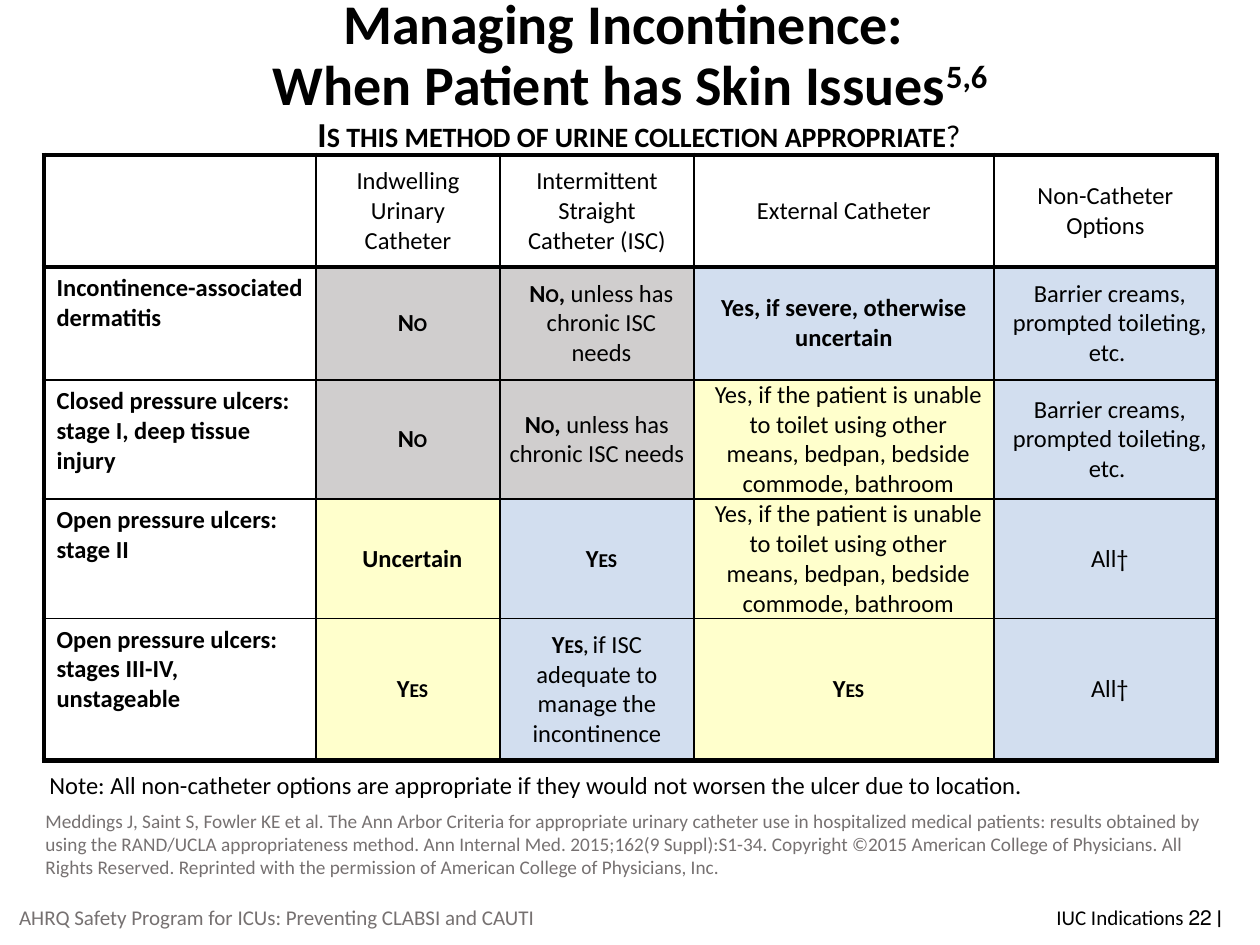
from dataclasses import dataclass

from lxml import etree
from pptx import Presentation
from pptx.dml.color import RGBColor
from pptx.enum.text import MSO_ANCHOR, PP_ALIGN
from pptx.oxml.ns import qn
from pptx.util import Emu, Pt

LEFT, CENTER, RIGHT = PP_ALIGN.LEFT, PP_ALIGN.CENTER, PP_ALIGN.RIGHT
TOP, MIDDLE = MSO_ANCHOR.TOP, MSO_ANCHOR.MIDDLE
SCALE = 914400 / 126
COLORS = {"black": "000000", "gray": "767171", "no": "D0CECE",
          "yes": "D2DEEF", "maybe": "FFFFCC"}
THIN, THICK = 1, 3
INDENT = 9
COLS = (272, 184, 194, 300, 223)
ROWS = (112, 113, 117, 117, 142)
TABLE_X, TABLE_Y = 44, 155


@dataclass(frozen=True)
class Run:
    text: str
    bold: bool = False
    caps: bool = False
    size: int = 0
    font: str = "Calibri"
    base: int = 0


@dataclass(frozen=True)
class Box:
    rect: tuple[int, int, int, int]
    lines: tuple[tuple[Run, ...], ...]
    size: int
    color: str = "black"
    align: PP_ALIGN = LEFT
    anchor: MSO_ANCHOR = TOP
    spacing: float = 1.0


@dataclass(frozen=True)
class Cell:
    runs: tuple[Run, ...]
    fill: str = ""
    indent: int = INDENT


def px(n: int) -> Emu:
    return Emu(round(n * SCALE))


def add_runs(p, runs: tuple[Run, ...], size: int, color: str) -> None:
    for run in runs:
        r = p.add_run()
        r.text = run.text
        fmt = {"name": run.font, "size": Pt(run.size or size), "bold": run.bold}
        for key, value in fmt.items():
            setattr(r.font, key, value)
        r.font.color.rgb = RGBColor.from_string(COLORS[color])
        rPr = r.font._element
        if run.caps:
            rPr.set("cap", "small")
        if run.base:
            rPr.set("baseline", str(run.base * 1000))


def add_box(s, box: Box) -> None:
    tf = s.shapes.add_textbox(*map(px, box.rect)).text_frame
    for key, value in {"word_wrap": True, "vertical_anchor": box.anchor}.items():
        setattr(tf, key, value)
    p = tf.paragraphs[0]
    for key, value in {"alignment": box.align, "line_spacing": box.spacing}.items():
        setattr(p, key, value)
    for i, runs in enumerate(box.lines):
        if i:
            p.add_line_break()
        add_runs(p, runs, box.size, box.color)


def add_border(tcPr, side: str, width: int) -> None:
    ln = etree.SubElement(tcPr, qn(f"a:ln{side}"), w=str(Pt(width)))
    fill = etree.SubElement(ln, qn("a:solidFill"))
    etree.SubElement(fill, qn("a:srgbClr"), val=COLORS["black"])


def fill_cell(tc, cell: Cell, row: int, col: int) -> None:
    label, body = col == 0, row > 0 and col > 0
    fmt = {"vertical_anchor": TOP if label else MIDDLE}
    if body:
        fmt |= {"margin_left": px(9), "margin_right": px(9),
                "margin_top": 0, "margin_bottom": 0}
    for key, value in fmt.items():
        setattr(tc, key, value)
    edges = {"L": col == 0, "R": col == len(COLS) - 1,
             "T": row <= 1, "B": row in (0, len(ROWS) - 1)}
    for side, thick in edges.items():
        add_border(tc._tc.get_or_add_tcPr(), side, THICK if thick else THIN)
    if cell.fill:
        tc.fill.solid()
        tc.fill.fore_color.rgb = RGBColor.from_string(COLORS[cell.fill])
    else:
        tc.fill.background()
    p = tc.text_frame.paragraphs[0]
    p.alignment = LEFT if label else CENTER
    if body and cell.indent:
        pPr = p._p.get_or_add_pPr()
        pPr.set("marL", str(px(cell.indent)))
        pPr.set("indent", "0")
    add_runs(p, cell.runs, 14, "black")


def add_grid(s, grid: tuple[tuple[Cell, ...], ...]) -> None:
    rect = (TABLE_X, TABLE_Y, sum(COLS), sum(ROWS))
    table = s.shapes.add_table(len(ROWS), len(COLS), *map(px, rect)).table
    for key in ("first_row", "horz_banding"):
        setattr(table, key, False)
    for column, width in zip(table.columns, COLS):
        column.width = px(width)
    for row, height in zip(table.rows, ROWS):
        row.height = px(height)
    for i, cells in enumerate(grid):
        for j, cell in enumerate(cells):
            fill_cell(table.cell(i, j), cell, i, j)


def plain(text: str, fill: str = "") -> Cell:
    return Cell((Run(text),), fill)


def strong(text: str, fill: str = "", caps: bool = False, indent: int = INDENT) -> Cell:
    return Cell((Run(text, True, caps),), fill, indent)


def no_unless(indent: int) -> Cell:
    return Cell((Run("No", True, True), Run(", ", True),
                 Run("unless has chronic ISC needs")), "no", indent)


NO = strong("No", "no", True)
CREAMS = plain("Barrier creams, prompted toileting, etc. ", "yes")
UNABLE = plain("Yes, if the patient is unable to toilet using other means, "
               "bedpan, bedside commode, bathroom", "maybe")
ALL = plain("All†", "yes")
YES_IF = Cell((Run("Yes, ", True, True),
               Run("if ISC adequate to manage the incontinence")), "yes", 0)

GRID = (
    (Cell(()), plain("Indwelling Urinary Catheter"),
     plain("Intermittent Straight Catheter (ISC)"),
     plain("External Catheter"), plain("Non-Catheter Options")),
    (strong("Incontinence-associated dermatitis"), NO, no_unless(INDENT),
     strong("Yes, if severe, otherwise uncertain", "yes", indent=0), CREAMS),
    (strong("Closed pressure ulcers: stage I, deep tissue injury"), NO,
     no_unless(0), UNABLE, CREAMS),
    (strong("Open pressure ulcers: stage II"), strong("Uncertain", "maybe"),
     strong("Yes", "yes", True), UNABLE, ALL),
    (strong("Open pressure ulcers: stages III-IV, unstageable"),
     strong("Yes", "maybe", True), YES_IF, strong("Yes", "maybe", True), ALL),
)

BOXES = (
    Box((87, 1, 1086, 112),
        ((Run("Managing Incontinence: ", True),),
         (Run("When Patient has Skin Issues", True), Run("5,6", True, base=30))),
        32, align=CENTER, anchor=MIDDLE, spacing=0.9),
    Box((228, 106, 822, 55),
        ((Run("Is this method of urine collection appropriate", True, True),
          Run("?", size=18)),), 20, align=CENTER),
    Box((37, 764, 1194, 43),
        ((Run("Note: All non-catheter options are appropriate if they would not "
              "worsen the ulcer due to location."),),), 14),
    Box((33, 803, 1200, 83),
        ((Run("Meddings J, Saint S, Fowler KE et al. The Ann Arbor Criteria for "
              "appropriate urinary catheter use in hospitalized medical patients: "
              "results obtained by using the RAND/UCLA appropriateness method. "
              "Ann Internal Med. 2015;162(9 Suppl):S1-34. Copyright ©2015 American "
              "College of Physicians. All Rights Reserved. Reprinted with the "
              "permission of American College of Physicians, Inc."),),), 11, "gray"),
    Box((0, 892, 554, 50),
        ((Run("AHRQ Safety Program for ICUs: Preventing CLABSI and CAUTI"),),),
        12, "gray", CENTER, MIDDLE),
    Box((950, 892, 284, 50),
        ((Run("IUC Indications "), Run("׀ ", font="Lato"), Run("22")),),
        12, align=RIGHT, anchor=MIDDLE),
)


def main() -> None:
    """Build the slide on managing incontinence with skin issues."""
    prs = Presentation()
    prs.slide_width, prs.slide_height = px(1260), px(945)
    s = prs.slides.add_slide(prs.slide_layouts[6])
    add_grid(s, GRID)
    for box in BOXES:
        add_box(s, box)
    prs.save("out.pptx")


if __name__ == "__main__":
    main()
